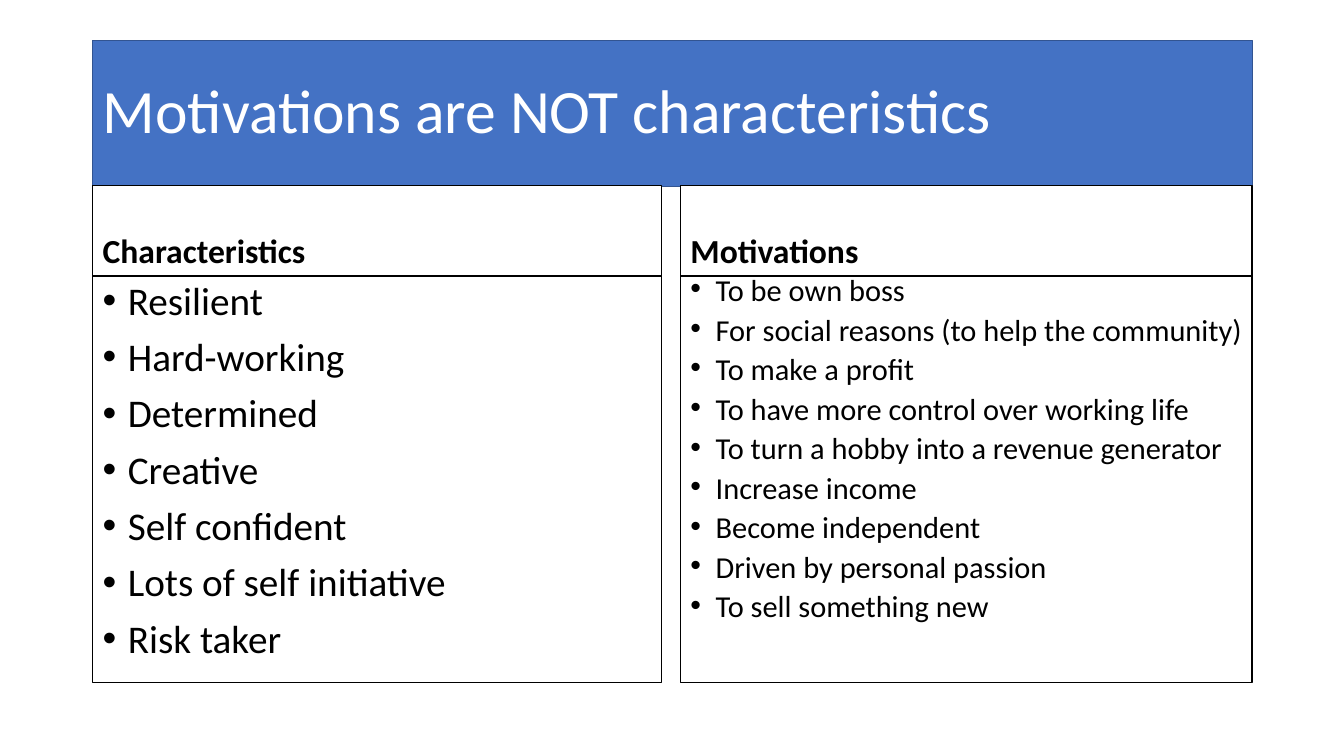
"""Build a slide that sets characteristics beside motivations."""
from lxml import etree
from pptx import Presentation
from pptx.dml.color import RGBColor
from pptx.enum.shapes import MSO_SHAPE
from pptx.enum.text import MSO_ANCHOR, MSO_AUTO_SIZE, PP_ALIGN
from pptx.oxml.ns import qn
from pptx.util import Inches, Pt

BLUE = RGBColor(0x44, 0x72, 0xC4)
DARK_BLUE = RGBColor(0x32, 0x54, 0x91)
BLACK = RGBColor(0, 0, 0)
WHITE = RGBColor(255, 255, 255)

LEFT, TITLE_TOP, TITLE_WIDTH, TITLE_HEIGHT = 0.92, 0.4, 11.5, 1.45
HEADING_TOP, HEADING_HEIGHT, LIST_HEIGHT = 1.84, 0.9, 4.03

COLUMNS = [
    (LEFT, 5.64, "Characteristics", 28, 0.9, [
        "Resilient", "Hard-working", "Determined", "Creative",
        "Self confident", "Lots of self initiative", "Risk taker",
    ]),
    (6.75, 5.67, "Motivations", 21.7, 0.7, [
        "To be own boss",
        "For social reasons (to help the community)",
        "To make a profit",
        "To have more control over working life",
        "To turn a hobby into a revenue generator",
        "Increase income",
        "Become independent",
        "Driven by personal passion",
        "To sell something new",
    ]),
]


def write_text(shape, lines, size, color=BLACK, fill=WHITE, line_color=BLACK, bold=False,
               bullet=False, anchor=MSO_ANCHOR.TOP, line_spacing=0.9, space_before=10):
    shape.fill.solid()
    shape.fill.fore_color.rgb = fill
    shape.line.color.rgb = line_color
    shape.line.width = Pt(1)
    frame = shape.text_frame
    frame.word_wrap = True
    frame.auto_size = MSO_AUTO_SIZE.NONE
    frame.vertical_anchor = anchor
    frame.text = "\n".join(lines)
    for paragraph in frame.paragraphs:
        paragraph.alignment = PP_ALIGN.LEFT
        paragraph.line_spacing = line_spacing
        paragraph.space_before = Pt(space_before)
        font = paragraph.runs[0].font
        font.name = "Calibri"
        font.size = Pt(size)
        font.bold = bold
        font.color.rgb = color
        if bullet:
            properties = paragraph._p.get_or_add_pPr()
            properties.set("marL", str(Inches(0.25)))
            properties.set("indent", str(Inches(-0.25)))
            etree.SubElement(properties, qn("a:buFont")).set("typeface", "Arial")
            etree.SubElement(properties, qn("a:buChar")).set("char", "•")


def add_box(slide, left, top, width, height):
    shape = slide.shapes.add_shape(
        MSO_SHAPE.RECTANGLE, Inches(left), Inches(top), Inches(width), Inches(height))
    shape.shadow.inherit = False
    return shape


presentation = Presentation()
presentation.slide_width = Inches(13.33)
presentation.slide_height = Inches(7.5)
slide = presentation.slides.add_slide(presentation.slide_layouts[5])

title = slide.shapes.title
title.left, title.top = Inches(LEFT), Inches(TITLE_TOP)
title.width, title.height = Inches(TITLE_WIDTH), Inches(TITLE_HEIGHT)
write_text(title, ["Motivations are NOT characteristics"], 44, color=WHITE, fill=BLUE,
           line_color=DARK_BLUE, anchor=MSO_ANCHOR.MIDDLE, space_before=0)

for left, width, heading, size, line_spacing, items in COLUMNS:
    heading_box = add_box(slide, left, HEADING_TOP, width, HEADING_HEIGHT)
    write_text(heading_box, [heading], 24, bold=True, anchor=MSO_ANCHOR.BOTTOM)
    list_box = add_box(slide, left, HEADING_TOP + HEADING_HEIGHT, width, LIST_HEIGHT)
    write_text(list_box, items, size, bullet=True, line_spacing=line_spacing)

presentation.save("out.pptx")
